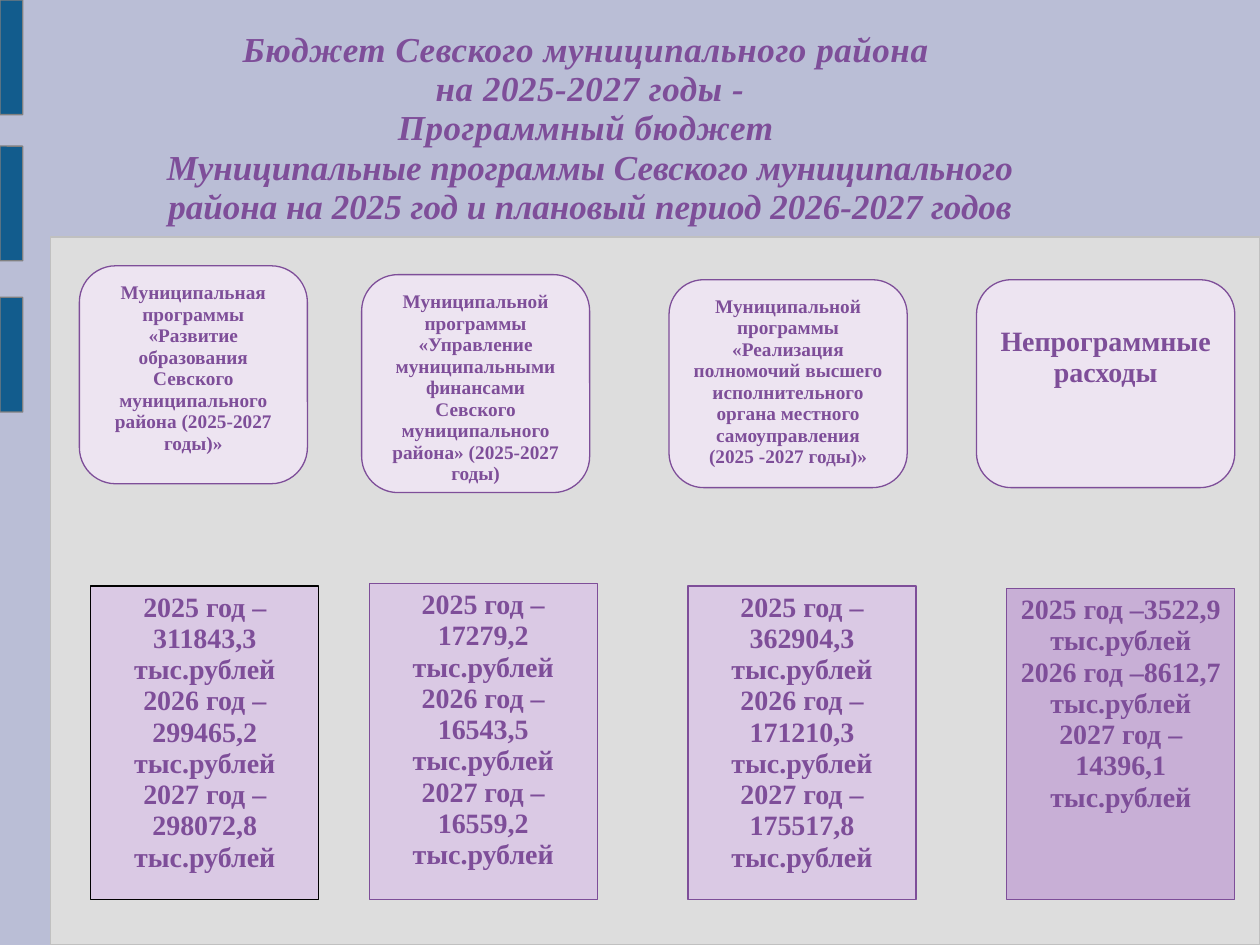
from pptx import Presentation
from pptx.dml.color import RGBColor
from pptx.enum.shapes import MSO_SHAPE
from pptx.enum.text import MSO_ANCHOR, MSO_AUTO_SIZE, PP_ALIGN
from pptx.util import Inches, Pt

RECT, ROUND = MSO_SHAPE.RECTANGLE, MSO_SHAPE.ROUNDED_RECTANGLE
TOP, CENTER, FIXED = MSO_ANCHOR.TOP, PP_ALIGN.CENTER, MSO_AUTO_SIZE.NONE

SKY = RGBColor(0xBA, 0xBE, 0xD6)
PANEL = RGBColor(0xDD, 0xDD, 0xDD)
SILVER = RGBColor(0xC0, 0xC0, 0xC0)
GRAY = RGBColor(0x80, 0x80, 0x80)
BLUE = RGBColor(0x12, 0x5C, 0x8D)
PURPLE = RGBColor(0x7E, 0x4E, 0x99)
PALE = RGBColor(0xED, 0xE4, 0xF1)
LILAC = RGBColor(0xDA, 0xC9, 0xE4)
MAUVE = RGBColor(0xC8, 0xAF, 0xD6)
BLACK = RGBColor(0, 0, 0)

FONT = "Times New Roman"
YEARS = (2025, 2026, 2027)
BARS = (0, 1.16, 2.36)
FLOOR, BOX_W = 7.14, 1.81

# "\v" is a line break inside a paragraph
TITLE = [
    "Бюджет Севского муниципального района ",
    "на 2025-2027 годы -\vПрограммный бюджет ",
    "Муниципальные программы Севского муниципального района "
    "на 2025 год и плановый период 2026-2027 годов",
]

# card: left, top, width, height; box: left, top
PLANS = [
    dict(name="Муниципальная программы «Развитие образования Севского "
              "муниципального района (2025-2027 годы)»",
         card=(0.63, 2.11, 1.81, 1.73), box=(0.72, 4.65),
         sums=("311843,3", "299465,2", "298072,8"), edge=BLACK),
    dict(name="Муниципальной программы «Управление муниципальными финансами "
              "Севского муниципального района» (2025-2027 годы)",
         card=(2.87, 2.18, 1.81, 1.73), box=(2.93, 4.63),
         sums=("17279,2", "16543,5", "16559,2")),
    dict(name="Муниципальной программы «Реализация полномочий высшего "
              "исполнительного органа местного самоуправления "
              "(2025 -2027 годы)»",
         card=(5.31, 2.22, 1.89, 1.65), box=(5.46, 4.65),
         sums=("362904,3", "171210,3", "175517,8")),
    dict(name="Непрограммные расходы", size=16, inset=0.29,
         card=(7.75, 2.22, 2.05, 1.65), box=(7.99, 4.67),
         sums=("3522,9", "8612,7", "14396,1"), fill=MAUVE),
]


def write(shape, lines, size=16, italic=False, inset=0.05, track=()):
    """Fill a shape with centred paragraphs; track holds spacing in 1/100 pt."""
    frame = shape.text_frame
    frame.word_wrap = True
    frame.auto_size = FIXED
    frame.vertical_anchor = TOP
    frame.margin_top = Inches(inset)
    frame.text = "\n".join(lines)
    for i, para in enumerate(frame.paragraphs):
        para.alignment = CENTER
        para.line_spacing = 0.93
        for run in para.runs:
            font = run.font
            font.name, font.size = FONT, Pt(size)
            font.bold, font.italic = True, italic
            font.color.rgb = PURPLE
            if i < len(track):
                font._element.set("spc", str(track[i]))


def block(slide, kind, area, fill, edge, bend=None):
    shape = slide.shapes.add_shape(kind, *map(Inches, area))
    shape.shadow.inherit = False
    shape.fill.solid()
    shape.fill.fore_color.rgb = fill
    shape.line.color.rgb = edge
    shape.line.width = Pt(0.75)
    if bend is not None:
        shape.adjustments[0] = bend
    return shape


def main():
    deck = Presentation()
    deck.slide_width, deck.slide_height = Inches(10), Inches(7.5)
    slide = deck.slides.add_slide(deck.slide_layouts[5])
    slide.background.fill.solid()
    slide.background.fill.fore_color.rgb = SKY

    title = slide.shapes.title
    title.left, title.top = Inches(0.91), Inches(0.2)
    title.width, title.height = Inches(7.55), Inches(2.23)
    write(title, TITLE, size=20, italic=True, track=(30, 30, 0))

    block(slide, RECT, (0.4, 1.88, 9.6, 5.62), PANEL, SILVER)
    for top in BARS:
        block(slide, ROUND, (0, top, 0.18, 0.91), BLUE, GRAY, bend=0.01)

    for plan in PLANS:
        card = block(slide, ROUND, plan["card"], PALE, PURPLE)
        write(card, [plan["name"]], size=plan.get("size", 11),
              inset=plan.get("inset", 0.05))
        left, top = plan["box"]
        box = block(slide, RECT, (left, top, BOX_W, FLOOR - top),
                    plan.get("fill", LILAC), plan.get("edge", PURPLE))
        write(box, [f"{year} год –{total} тыс.рублей"
                    for year, total in zip(YEARS, plan["sums"])])

    deck.save("out.pptx")


if __name__ == "__main__":
    main()
